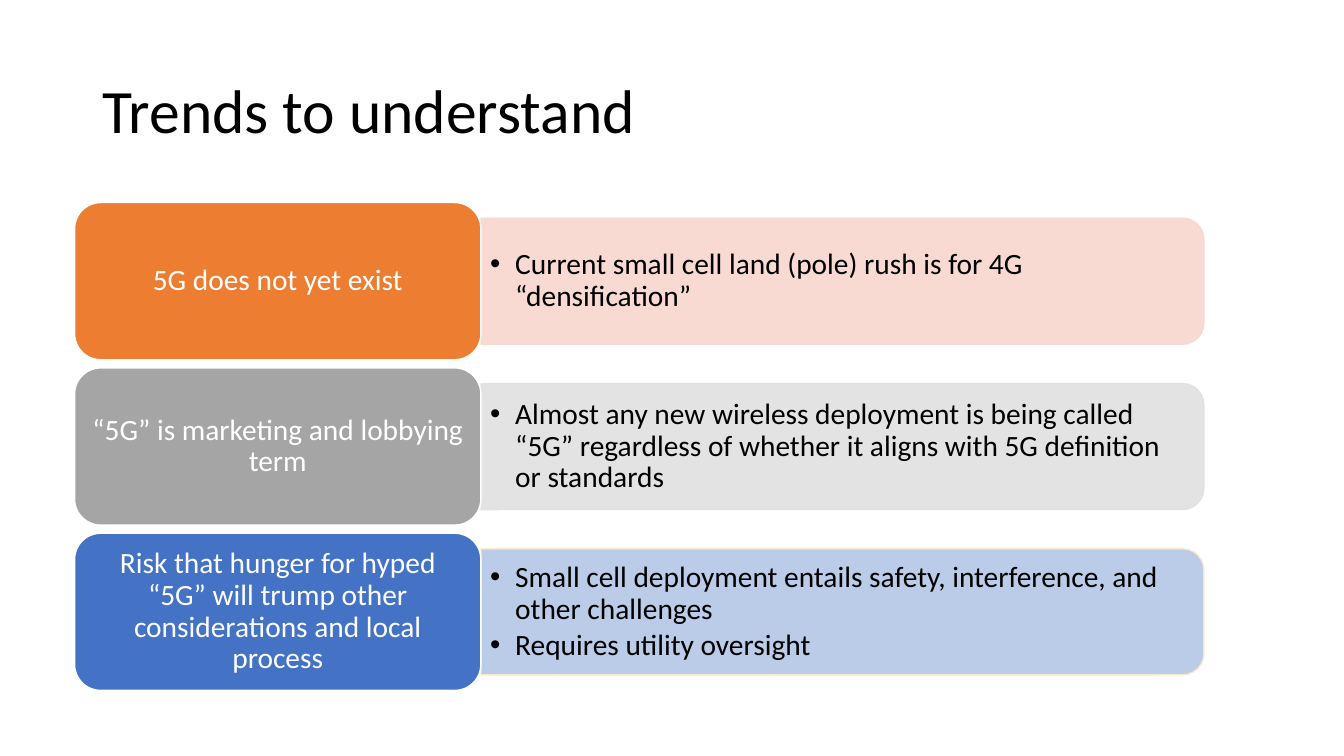
from lxml import etree
from pptx import Presentation
from pptx.dml.color import RGBColor
from pptx.enum.shapes import MSO_SHAPE
from pptx.enum.text import MSO_ANCHOR, PP_ALIGN
from pptx.oxml.ns import qn
from pptx.util import Inches, Pt

ROUND_RECT = MSO_SHAPE.ROUNDED_RECTANGLE
ROUND_TOP = MSO_SHAPE.ROUND_2_SAME_RECTANGLE
MIDDLE = MSO_ANCHOR.MIDDLE
LEFT, CENTER = PP_ALIGN.LEFT, PP_ALIGN.CENTER

# Content: label, details, label fill, bar fill, bar line
TITLE = "Trends to understand"
TRENDS = [
    ("5G does not yet exist",
     ["Current small cell land (pole) rush is for 4G “densification”"],
     "ED7D31", "F8D7CE", "F8D7CE"),
    ("“5G” is marketing and lobbying term",
     ["Almost any new wireless deployment is being called “5G” regardless "
      "of whether it aligns with 5G definition or standards"],
     "A5A5A5", "E1E1E1", "E1E1E1"),
    ("Risk that hunger for hyped “5G” will trump other considerations "
     "and local process",
     ["Small cell deployment entails safety, interference, and other challenges",
      "Requires utility oversight"],
     "4472C4", "B4C7E7", "FFE8CC"),
]
THEME = {"font": "Calibri", "title": 44, "body": 21,
         "dark": "000000", "light": "FFFFFF", "bar_alpha": 90}

# Layout in inches
ROW_TOP, ROW_PITCH = 2.01, 1.64
LABEL_X, LABEL_W, LABEL_H = 0.74, 4.03, 1.56
BAR_X, BAR_W, BAR_H = LABEL_X + LABEL_W, 7.17, 1.25
DETAIL_W, DETAIL_H = 7.11, 1.13


def set_alpha(color_parent, percent):
    for clr in color_parent.iter(qn("a:srgbClr")):
        etree.SubElement(clr, qn("a:alpha")).set("val", str(percent * 1000))


def add_block(s, kind, x, y, w, h, fill, line):
    sp = s.shapes.add_shape(kind, Inches(x), Inches(y), Inches(w), Inches(h))
    sp.shadow.inherit = False
    sp.fill.solid()
    sp.fill.fore_color.rgb = RGBColor.from_string(fill)
    sp.line.color.rgb = RGBColor.from_string(line)
    sp.line.width = Pt(1)
    return sp


def add_text_box(s, x, y, w, h):
    return s.shapes.add_textbox(Inches(x), Inches(y), Inches(w), Inches(h))


def write(sp, lines, size, color, align=LEFT, inset=(0.1, 0.05), bullet=False):
    tf = sp.text_frame
    tf.word_wrap = True
    tf.vertical_anchor = MIDDLE
    tf.margin_left = tf.margin_right = Inches(inset[0])
    tf.margin_top = tf.margin_bottom = Inches(inset[1])
    for i, line in enumerate(lines):
        p = tf.add_paragraph() if i else tf.paragraphs[0]
        p.alignment = align
        p.line_spacing = 0.9
        if bullet:
            p.space_after = Pt(3)
            ppr = p._p.get_or_add_pPr()
            ppr.set("marL", str(Inches(0.25)))
            ppr.set("indent", str(-Inches(0.25)))
            etree.SubElement(ppr, qn("a:buFont")).set("typeface", "Arial")
            etree.SubElement(ppr, qn("a:buChar")).set("char", "•")
        r = p.add_run()
        r.text = line
        r.font.name = THEME["font"]
        r.font.size = Pt(size)
        r.font.color.rgb = RGBColor.from_string(color)


def add_trend(s, row, label, details, label_fill, bar_fill, bar_line):
    top = ROW_TOP + row * ROW_PITCH
    middle = top + LABEL_H / 2

    # Bar: a top-rounded rectangle turned so its round end points right
    bar = add_block(s, ROUND_TOP, BAR_X + (BAR_W - BAR_H) / 2,
                    middle - BAR_W / 2, BAR_H, BAR_W, bar_fill, bar_line)
    bar.rotation = 90
    set_alpha(bar._element.spPr, THEME["bar_alpha"])

    # Bulleted details over the bar
    box = add_text_box(s, BAR_X, middle - DETAIL_H / 2, DETAIL_W, DETAIL_H)
    write(box, details, THEME["body"], THEME["dark"], inset=(0.09, 0.04),
          bullet=True)

    # Label
    sp = add_block(s, ROUND_RECT, LABEL_X, top, LABEL_W, LABEL_H,
                   label_fill, THEME["light"])
    write(sp, [label], THEME["body"], THEME["light"], CENTER, (0.09, 0.04))


def main():
    prs = Presentation()
    prs.slide_width, prs.slide_height = Inches(13.33), Inches(7.5)
    s = prs.slides.add_slide(prs.slide_layouts[6])

    write(add_text_box(s, 0.92, 0.4, 11.5, 1.45), [TITLE],
          THEME["title"], THEME["dark"])
    for row, trend in enumerate(TRENDS):
        add_trend(s, row, *trend)

    prs.save("out.pptx")


if __name__ == "__main__":
    main()
